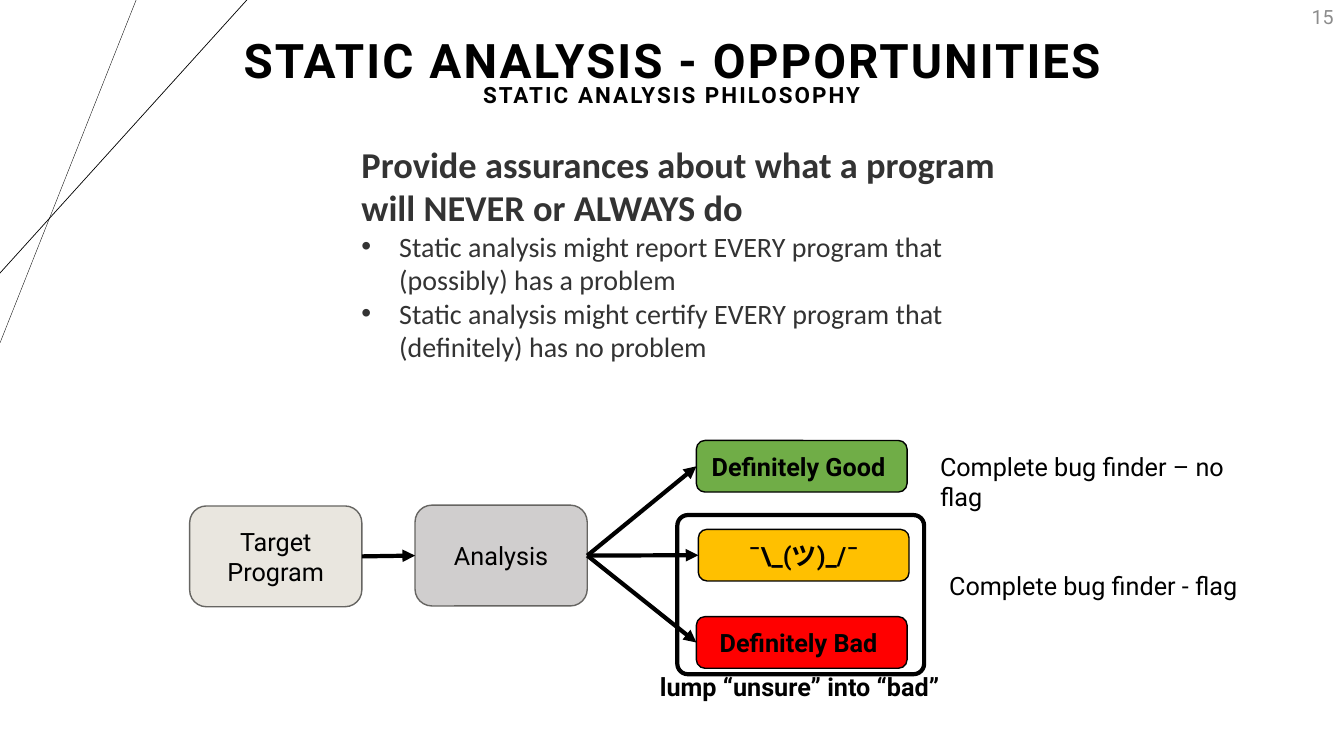
import pptx
import pptx.dml.color
import pptx.enum.shapes
import pptx.enum.text
import pptx.oxml.ns
import pptx.util
from dataclasses import dataclass
from lxml import etree

Cm = pptx.util.Cm
Pt = pptx.util.Pt
Color = pptx.dml.color.RGBColor.from_string
Align = pptx.enum.text.PP_ALIGN
Anchor = pptx.enum.text.MSO_ANCHOR
qn = pptx.oxml.ns.qn


@dataclass(frozen=True)
class Theme:
    font: str = "Roboto"
    body_font: str = "Calibri"
    black: str = "000000"
    body: str = "333333"
    number: str = "8C8C8C"
    border: str = "666562"
    target: str = "E9E6DF"
    analysis: str = "D0CECE"
    good: str = "70AD47"
    unsure: str = "FFC000"
    bad: str = "FF0000"
    title_size: int = 34
    subtitle_size: int = 16
    lead_size: int = 26
    bullet_size: int = 20
    label_size: int = 18
    number_size: int = 14


theme = Theme()


def write(paragraph, text, size=theme.label_size, color=theme.black, font=theme.font,
          bold=False, align=Align.LEFT, tracking=None, line_spacing=None, bullet=False):
    paragraph.alignment = align
    if line_spacing:
        paragraph.line_spacing = line_spacing
    run = paragraph.add_run()
    run.text = text
    run.font.name = font
    run.font.size = Pt(size)
    run.font.bold = bold
    run.font.color.rgb = Color(color)
    if tracking:
        run.font._element.set("spc", str(tracking))
    if bullet:
        properties = paragraph._p.get_or_add_pPr()
        properties.set("marL", str(Cm(0.95)))
        properties.set("indent", str(-Cm(0.95)))
        etree.SubElement(properties, qn("a:buFont")).set("typeface", "Arial")
        etree.SubElement(properties, qn("a:buChar")).set("char", "•")


def add_line(start, end, weight, arrow=False):
    line = slide.shapes.add_connector(pptx.enum.shapes.MSO_CONNECTOR.STRAIGHT,
                                      *(Cm(value) for value in start + end))
    line.line.color.rgb = Color(theme.black)
    line.line.width = Pt(weight)
    if arrow:
        etree.SubElement(line.line._get_or_add_ln(), qn("a:tailEnd")).set("type", "triangle")
    etree.SubElement(line._element.spPr, qn("a:effectLst"))
    return line


presentation = pptx.Presentation()
presentation.slide_width = Cm(33.87)
presentation.slide_height = Cm(19.05)
slide = presentation.slides.add_slide(presentation.slide_layouts[6])

add_line((3.43, 0), (0, 8.64), 0.25)
add_line((6.22, 0), (0, 6.88), 0.5)

heading = dict(bold=True, align=Align.CENTER, tracking=150, line_spacing=0.9)
text_boxes = [
    ("15", (26.24, -0.1, 7.62, 1.02), Anchor.MIDDLE, True,
     dict(size=theme.number_size, color=theme.number, align=Align.RIGHT)),
    ("STATIC ANALYSIS - OPPORTUNITIES", (0.05, -0.25, 33.81, 3.68), Anchor.MIDDLE, True,
     dict(size=theme.title_size, **heading)),
    ("STATIC ANALYSIS PHILOSOPHY", (0.03, 0.58, 33.81, 3.68), Anchor.MIDDLE, True,
     dict(size=theme.subtitle_size, **heading)),
    ("Complete bug finder - flag", (23.67, 14.25, 7.87, 1.02), Anchor.TOP, False, {}),
    ("Complete bug finder – no flag", (23.44, 11.25, 8.1, 1.02), Anchor.TOP, True, {}),
    ("lump “unsure” into “bad”", (16.38, 16.79, 7.72, 1.02), Anchor.TOP, False, dict(bold=True)),
]
for text, place, anchor, wrap, text_format in text_boxes:
    frame = slide.shapes.add_textbox(*(Cm(value) for value in place)).text_frame
    frame.word_wrap = wrap
    frame.vertical_anchor = anchor
    write(frame.paragraphs[0], text, **text_format)

stage_size = (4.34, 2.54)
verdict_size = (5.31, 1.3)
boxes = [
    ("outline", "", (17.07, 12.98), (6.22, 4.01), None, theme.black, 3),
    ("target", "Target Program", (4.78, 12.75), stage_size, theme.target, theme.border, 1),
    ("analysis", "Analysis", (10.46, 12.73), stage_size, theme.analysis, theme.border, 1),
    ("good", "Definitely Good ", (17.55, 11.1), verdict_size, theme.good, theme.black, 1),
    ("unsure", r"¯\_(ツ)_/¯", (17.6, 13.34), verdict_size, theme.unsure, theme.black, 1),
    ("bad", "Definitely Bad ", (17.55, 15.54), verdict_size, theme.bad, theme.black, 1),
]
shapes = {}
for name, text, position, size, fill, border, weight in boxes:
    shape = slide.shapes.add_shape(pptx.enum.shapes.MSO_SHAPE.ROUNDED_RECTANGLE,
                                   *(Cm(value) for value in position + size))
    shape.shadow.inherit = False
    shape.line.color.rgb = Color(border)
    shape.line.width = Pt(weight)
    if fill:
        shape.fill.solid()
        shape.fill.fore_color.rgb = Color(fill)
    else:
        shape.fill.background()
        shape.adjustments[0] = 0.066
    if text:
        shape.text_frame.word_wrap = True
        shape.text_frame.vertical_anchor = Anchor.MIDDLE
        write(shape.text_frame.paragraphs[0], text, bold=size == verdict_size, align=Align.CENTER)
    shapes[name] = shape

for source, target in [("target", "analysis"), ("analysis", "good"),
                       ("analysis", "unsure"), ("analysis", "bad")]:
    arrow = add_line((0, 0), (1, 1), 3, arrow=True)
    arrow.begin_connect(shapes[source], 3)
    arrow.end_connect(shapes[target], 1)

body = slide.shapes.add_textbox(Cm(8.86), Cm(3.45), Cm(16.94), Cm(5.89)).text_frame
body.word_wrap = True
write(body.paragraphs[0], "Provide assurances about what a program will NEVER or ALWAYS do",
      size=theme.lead_size, color=theme.body, font=theme.body_font, bold=True)
for text in ["Static analysis might report EVERY program that (possibly) has a problem",
             "Static analysis might certify EVERY program that (definitely) has no problem"]:
    write(body.add_paragraph(), text, size=theme.bullet_size, color=theme.body,
          font=theme.body_font, bullet=True)

presentation.save("out.pptx")
